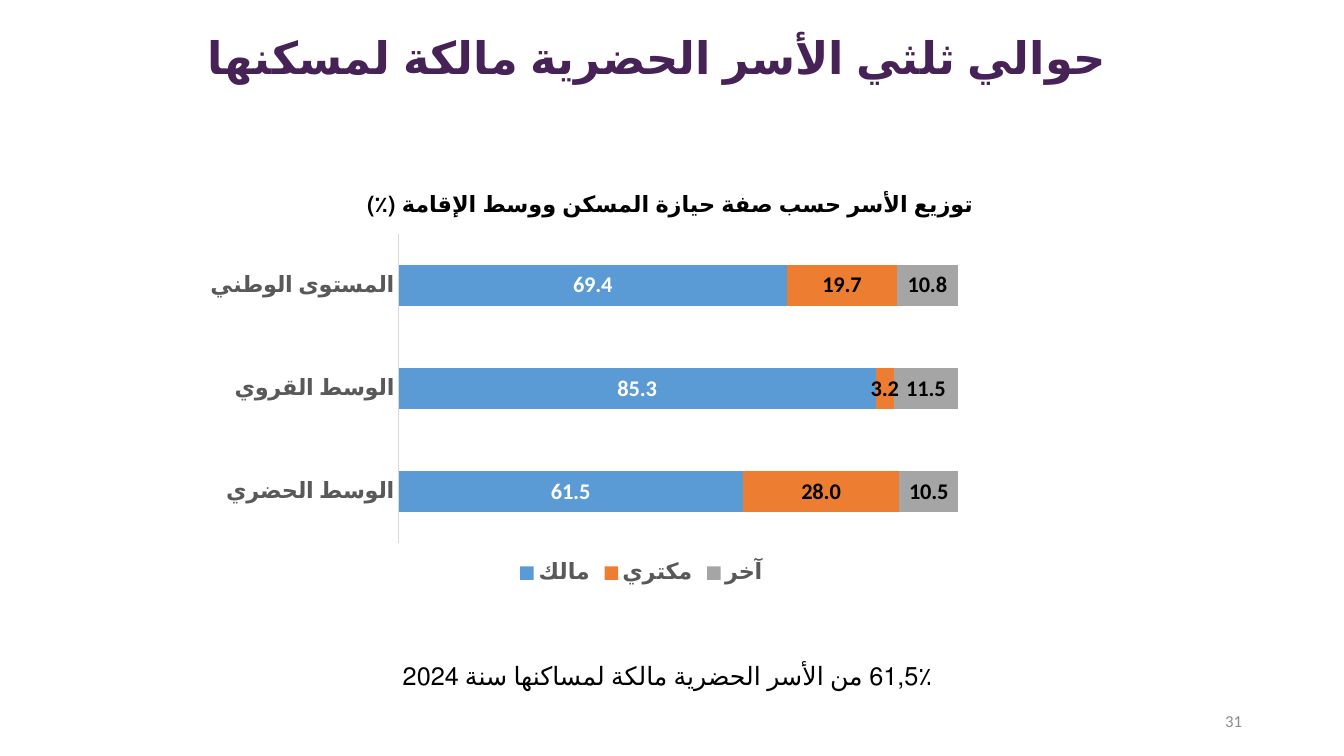
"""Build the slide on how households hold their homes."""
from dataclasses import dataclass

from lxml import etree
from pptx import Presentation
from pptx.chart.data import CategoryChartData
from pptx.dml.color import RGBColor
from pptx.enum.chart import XL_CHART_TYPE, XL_LABEL_POSITION, XL_LEGEND_POSITION, XL_TICK_MARK
from pptx.enum.lang import MSO_LANGUAGE_ID
from pptx.enum.text import MSO_ANCHOR, MSO_AUTO_SIZE, PP_ALIGN
from pptx.oxml.ns import qn
from pptx.util import Inches, Pt

STACKED = XL_CHART_TYPE.BAR_STACKED
CENTER_LABEL = XL_LABEL_POSITION.CENTER
BOTTOM = XL_LEGEND_POSITION.BOTTOM
NO_TICK = XL_TICK_MARK.NONE
ARABIC = MSO_LANGUAGE_ID.ARABIC_MOROCCO
TOP, MIDDLE = MSO_ANCHOR.TOP, MSO_ANCHOR.MIDDLE
CENTER, RIGHT = PP_ALIGN.CENTER, PP_ALIGN.RIGHT
NO_FIT = MSO_AUTO_SIZE.NONE
SLIDE_W, SLIDE_H = Inches(13.33), Inches(7.5)
TITLE_ONLY = 5


@dataclass(frozen=True)
class Theme:
    """Colours, fonts and type sizes of the slide."""
    title: str = "462256"
    text: str = "000000"
    light: str = "FFFFFF"
    axis_text: str = "595959"
    axis_line: str = "D9D9D9"
    number: str = "8C8C8C"
    owner: str = "5B9BD5"
    tenant: str = "ED7D31"
    other: str = "A5A5A5"
    font: str = "Calibri"
    heading_font: str = "Times New Roman"
    title_size: int = 32
    chart_size: int = 16
    note_size: int = 18
    number_size: int = 12


THEME = Theme()


@dataclass(frozen=True)
class Box:
    """A place given in percent of the slide's width and height."""
    left: float
    top: float
    width: float
    height: float

    def emu(self) -> tuple[int, int, int, int]:
        """Return left, top, width and height in slide units."""
        return (int(SLIDE_W * self.left / 100), int(SLIDE_H * self.top / 100),
                int(SLIDE_W * self.width / 100), int(SLIDE_H * self.height / 100))


@dataclass(frozen=True)
class Tenure:
    """One kind of tenure with its share in each area."""
    name: str
    values: tuple[float, ...]
    fill: str
    label: str


TITLE_BOX = Box(8.55, 3.2, 80.65, 8.53)
HEADING_BOX = Box(12.3, 24.53, 75.17, 4.93)
CHART_BOX = Box(14.4, 30, 66.62, 47.87)
NOTE_BOX = Box(8.55, 84.67, 82.22, 6.8)
NUMBER_BOX = Box(70.67, 92.67, 22.5, 5.33)
PLOT_PERCENT = {"x": 22.9, "y": 2, "w": 62.5, "h": 85.5}

AREAS = ("الوسط الحضري", "الوسط القروي", "المستوى الوطني")
TENURES = (
    Tenure("مالك", (61.5, 85.3, 69.4), THEME.owner, THEME.light),
    Tenure("مكتري", (28, 3.2, 19.7), THEME.tenant, THEME.text),
    Tenure("آخر", (10.5, 11.5, 10.8), THEME.other, THEME.text),
)


def style_font(font, size: int, color: str, *, bold: bool = True, name: str = THEME.font) -> None:
    """Set size, colour, weight and face of a font."""
    font.size, font.bold, font.name = Pt(size), bold, name
    font.color.rgb = RGBColor.from_string(color)


def write(sp, text: str, size: int, color: str, *, bold: bool = False, name: str = THEME.font,
          align=CENTER, anchor=TOP, rtl: bool = True, spacing: float = 1.0) -> None:
    """Write one formatted paragraph into a shape."""
    tf = sp.text_frame
    tf.word_wrap, tf.auto_size, tf.vertical_anchor = True, NO_FIT, anchor
    p = tf.paragraphs[0]
    p.alignment, p.line_spacing = align, spacing
    r = p.add_run()
    r.text = text
    style_font(r.font, size, color, bold=bold, name=name)
    if rtl:
        p._p.get_or_add_pPr().set("rtl", "1")
        r.font.language_id = ARABIC


def add_text(s, box: Box, text: str, size: int, color: str, **fmt) -> None:
    """Add a text box with one formatted paragraph."""
    write(s.shapes.add_textbox(*box.emu()), text, size, color, **fmt)


def set_plot_layout(chart) -> None:
    """Fix the inner plot area to shares of the chart's size."""
    area = chart._chartSpace.chart.plotArea
    for old in area.findall(qn("c:layout")):
        area.remove(old)
    layout = etree.Element(qn("c:layout"))
    manual = etree.SubElement(layout, qn("c:manualLayout"))
    shares = {tag: percent / 100 for tag, percent in PLOT_PERCENT.items()}
    settings = {"layoutTarget": "inner", "xMode": "edge", "yMode": "edge", **shares}
    for tag, value in settings.items():
        etree.SubElement(manual, qn(f"c:{tag}")).set("val", str(value))
    area.insert(0, layout)


def add_tenure_chart(s) -> None:
    """Add the stacked bars of tenure by area."""
    data = CategoryChartData(number_format="0.0")
    data.categories = AREAS
    for tenure in TENURES:
        data.add_series(tenure.name, tenure.values)
    chart = s.shapes.add_chart(STACKED, *CHART_BOX.emu(), data).chart
    style_font(chart.font, THEME.chart_size, THEME.text)
    chart.has_title = False
    chart.has_legend = True
    chart.legend.position, chart.legend.include_in_layout = BOTTOM, False
    style_font(chart.legend.font, THEME.chart_size, THEME.axis_text)

    axis = chart.category_axis
    axis.major_tick_mark = axis.minor_tick_mark = NO_TICK
    axis.format.line.width = Pt(0.75)
    axis.format.line.color.rgb = RGBColor.from_string(THEME.axis_line)
    style_font(axis.tick_labels.font, THEME.chart_size, THEME.axis_text)
    values = chart.value_axis
    values.minimum_scale, values.maximum_scale = 0, 100
    values.has_major_gridlines = values.visible = False

    plot = chart.plots[0]
    plot.gap_width, plot.overlap, plot.vary_by_categories = 150, 100, False
    for series, tenure in zip(plot.series, TENURES):
        series.format.fill.solid()
        series.format.fill.fore_color.rgb = RGBColor.from_string(tenure.fill)
        labels = series.data_labels
        labels.show_value, labels.position = True, CENTER_LABEL
        labels.number_format, labels.number_format_is_linked = "0.0", False
        style_font(labels.font, THEME.chart_size, tenure.label)
    set_plot_layout(chart)


def main() -> None:
    """Build and save the slide."""
    prs = Presentation()
    prs.slide_width, prs.slide_height = SLIDE_W, SLIDE_H
    s = prs.slides.add_slide(prs.slide_layouts[TITLE_ONLY])
    title = s.shapes.title
    title.left, title.top, title.width, title.height = TITLE_BOX.emu()
    write(title, "حوالي ثلثي الأسر الحضرية مالكة لمسكنها", THEME.title_size, THEME.title, bold=True)
    add_text(s, HEADING_BOX, "توزيع الأسر حسب صفة حيازة المسكن ووسط الإقامة (٪)",
             THEME.chart_size, THEME.text, bold=True, name=THEME.heading_font)
    add_text(s, NOTE_BOX, "61,5٪ من الأسر الحضرية مالكة لمساكنها سنة 2024",
             THEME.note_size, THEME.text, spacing=1.5)
    add_tenure_chart(s)
    add_text(s, NUMBER_BOX, "31", THEME.number_size, THEME.number,
             align=RIGHT, anchor=MIDDLE, rtl=False)
    prs.save("out.pptx")


if __name__ == "__main__":
    main()
